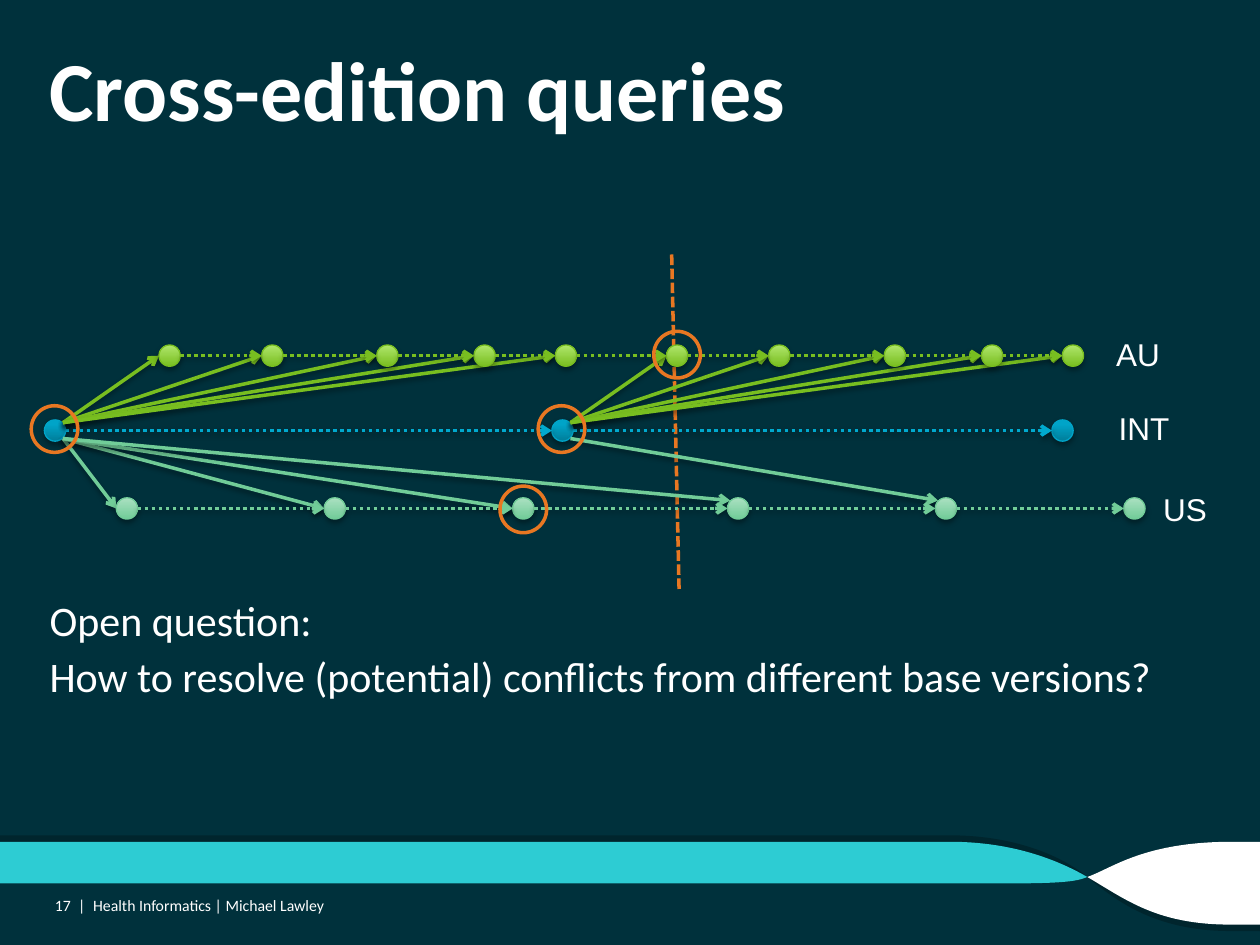
"""Build the slide on queries across editions."""
import pptx
import pptx.dml.color
import pptx.enum.dml
import pptx.enum.shapes
import pptx.enum.text
import pptx.util
from lxml import etree
from pptx.oxml.ns import qn

Cm, Pt = pptx.util.Cm, pptx.util.Pt
DASH = pptx.enum.dml.MSO_LINE
ALIGN = pptx.enum.text.PP_ALIGN
ANCHOR = pptx.enum.text.MSO_ANCHOR

WHITE, NIGHT, SHADE, TEAL, ORANGE = "FFFFFF", "00313C", "00252D", "2DCCD3", "E87722"
DOT, RING, NEAR = 0.43, 0.94, 0.16

ROWS = {
    "INT": {
        "y": 8.68, "xs": [1.11, 11.34, 21.42], "line": "00A9CE", "edge": "00A5C9",
        "stops": [(0, "007E9A"), (0.8, "00A4C8")], "label": (22.3, 8.13),
    },
    "US": {
        "y": 10.25, "xs": [2.56, 6.75, 10.55, 14.88, 19.07, 22.87],
        "line": "71CC98", "edge": "71CC98",
        "stops": [(0, "71CC98"), (1, "AAE0C1")], "label": (23.2, 9.75),
    },
    "AU": {
        "y": 7.17, "xs": [3.42, 5.49, 7.81, 9.77, 11.41, 13.65, 15.71, 18.04, 20, 21.63],
        "line": "78BE20", "edge": "78BE20",
        "stops": [(0, "78BE20"), (1, "B0E66B")], "label": (22.25, 6.63),
    },
}
LINKS = {"US": [0, 0, 0, 0, 1], "AU": [0] * 5 + [1] * 5}
HIGH = {"US": {3, 4}, "AU": set()}
MARKS = [(1.1, 8.65), (11.32, 8.65), (10.55, 10.27), (13.65, 7.15)]
CUT = [(13.54, 5.13), (13.69, 11.91)]

BANDS = [
    (SHADE, [
        [(25.4, 16.97), (24.84, 16.97),
         ((23.06, 16.97), (22.43, 17.5), (21.92, 17.68)),
         (25.4, 17.68), (25.4, 18.77)],
        [(19.15, 16.84), (0, 16.84), (0, 17.68), (21.92, 17.68),
         ((21.34, 17.2), (20.35, 16.84), (19.15, 16.84))],
    ]),
    (SHADE, [
        [(21.92, 17.68), (0, 17.68), (0, 17.81), (20.19, 17.81),
         ((21.34, 17.81), (21.69, 17.78), (21.92, 17.68))],
        [(25.4, 17.68), (21.92, 17.68),
         ((22.53, 18.19), (23.32, 18.77), (24.82, 18.77)), (25.4, 18.77)],
    ]),
    (TEAL, [
        [(21.92, 17.68), ((21.26, 17.3), (20.35, 16.97), (19.15, 16.97)),
         (0, 16.97), (0, 17.81), (20.19, 17.81),
         ((21.34, 17.81), (21.69, 17.78), (21.92, 17.68))],
    ]),
    (WHITE, [
        [(24.84, 16.97), ((23.06, 16.97), (22.43, 17.5), (21.92, 17.68)),
         ((22.71, 18.14), (23.32, 18.64), (24.82, 18.64)),
         (25.4, 18.64), (25.4, 16.97)],
    ]),
]
TITLE = ["Cross-edition queries"]
BODY = ["Open question:", "How to resolve (potential) conflicts from different base versions?"]


def tint(code):
    return pptx.dml.color.RGBColor.from_string(code)


def shadow(shape, alpha, dist):
    props = shape._element.spPr
    for old in props.findall(qn("a:effectLst")):
        props.remove(old)
    list_ = etree.SubElement(props, qn("a:effectLst"))
    if alpha:
        outer = etree.SubElement(
            list_, qn("a:outerShdw"), blurRad=str(Pt(3.1)), dist=str(Pt(dist)),
            dir="5400000", rotWithShape="0")
        color = etree.SubElement(outer, qn("a:srgbClr"), val="000000")
        etree.SubElement(color, qn("a:alpha"), val=str(alpha * 1000))


def band(slide, code, loops):
    ends = [[p[-1] if len(p) == 3 else p for p in loop] for loop in loops]
    ends = [[(Cm(x), Cm(y)) for x, y in loop] for loop in ends]
    form = slide.shapes.build_freeform(*ends[0][0])
    for i, loop in enumerate(ends):
        if i:
            form.move_to(*loop[0])
        form.add_line_segments(loop[1:], close=False)
    shape = form.convert_to_shape()
    steps = [part for loop in loops for part in loop[1:]]
    for node, part in zip(list(shape._element.iter(qn("a:lnTo"))), steps):
        if len(part) == 3:
            curve = etree.Element(qn("a:cubicBezTo"))
            for x, y in part:
                etree.SubElement(curve, qn("a:pt"), x=str(Cm(x) - shape.left),
                                 y=str(Cm(y) - shape.top))
            node.getparent().replace(node, curve)
    shape.shadow.inherit = False
    shape.fill.solid()
    shape.fill.fore_color.rgb = tint(code)
    shape.line.fill.background()


def text(slide, area, lines, size, font="Calibri", pad=0, bold=False, space=None,
         gap=0, align=ALIGN.LEFT, anchor=ANCHOR.TOP):
    frame = slide.shapes.add_textbox(*map(Cm, area)).text_frame
    frame.word_wrap = True
    frame.vertical_anchor = anchor
    frame.margin_left = frame.margin_right = Cm(pad)
    frame.margin_top = frame.margin_bottom = Cm(pad / 2)
    frame.text = "\n".join(lines)
    for i, para in enumerate(frame.paragraphs):
        para.alignment = align
        para.line_spacing = space
        para.space_before = Pt(gap if i else 0)
        for run in para.runs:
            run.font.name, run.font.size, run.font.bold = font, Pt(size), bold
            run.font.color.rgb = tint(WHITE)


def line(slide, start, end, code, dash=None, arrow=True):
    item = slide.shapes.add_connector(
        pptx.enum.shapes.MSO_CONNECTOR.STRAIGHT, *map(Cm, (*start, *end)))
    item.line.color.rgb = tint(code)
    item.line.width = Pt(2)
    if dash:
        item.line.dash_style = dash
    if arrow:
        etree.SubElement(item.line._get_or_add_ln(), qn("a:tailEnd"), type="arrow")
    shadow(item, 38 if arrow else 0, 1.6)


def disc(slide, x, y, size, code, width):
    shape = slide.shapes.add_shape(
        pptx.enum.shapes.MSO_SHAPE.OVAL,
        Cm(x - size / 2), Cm(y - size / 2), Cm(size), Cm(size))
    shape.shadow.inherit = False
    shape.fill.background()
    shape.line.color.rgb = tint(code)
    shape.line.width = Pt(width)
    return shape


def row(slide, name):
    data = ROWS[name]
    y, xs, base = data["y"], data["xs"], ROWS["INT"]
    side = 1 if y > base["y"] else -1
    for i, root in enumerate(LINKS.get(name, [])):
        start = base["xs"][root] + NEAR, base["y"] + side * NEAR
        end = (xs[i] - NEAR, y - NEAR) if i in HIGH[name] else (xs[i] - DOT / 2, y)
        line(slide, start, end, data["line"])
    for x in xs:
        dot = disc(slide, x, y, DOT, data["edge"], 0.75)
        dot.fill.gradient()
        dot.fill.gradient_angle = 90
        for stop, (place, code) in zip(dot.fill.gradient_stops, data["stops"]):
            stop.position = place
            stop.color.rgb = tint(code)
        shadow(dot, 35, 1.8)
    for left, right in zip(xs, xs[1:]):
        line(slide, (left + DOT / 2, y), (right - DOT / 2, y), data["line"],
             DASH.ROUND_DOT)
    text(slide, (*data["label"], 2.21, 1.07), [name], 18, "Arial", pad=0.25)


def main():
    deck = pptx.Presentation()
    deck.slide_width, deck.slide_height = Cm(25.4), Cm(19.05)
    slide = deck.slides.add_slide(deck.slide_layouts[6])
    slide.background.fill.solid()
    slide.background.fill.fore_color.rgb = tint(NIGHT)
    for code, loops in BANDS:
        band(slide, code, loops)
    text(slide, (1, 0.72, 23.5, 2.36), TITLE, 48, bold=True, space=0.9,
         anchor=ANCHOR.MIDDLE)
    text(slide, (1, 12.1, 23.5, 4.1), BODY, 24, space=0.9, gap=6)
    text(slide, (1.88, 18.06, 16.89, 0.36), ["Health Informatics | Michael Lawley"], 9,
         anchor=ANCHOR.MIDDLE)
    text(slide, (0.91, 18.06, 0.81, 0.36), ["17  |"], 9, align=ALIGN.RIGHT,
         anchor=ANCHOR.MIDDLE)
    line(slide, *CUT, ORANGE, DASH.SQUARE_DOT, arrow=False)
    for name in ROWS:
        row(slide, name)
    for x, y in MARKS:
        disc(slide, x, y, RING, ORANGE, 2)
    deck.save("out.pptx")


if __name__ == "__main__":
    main()
